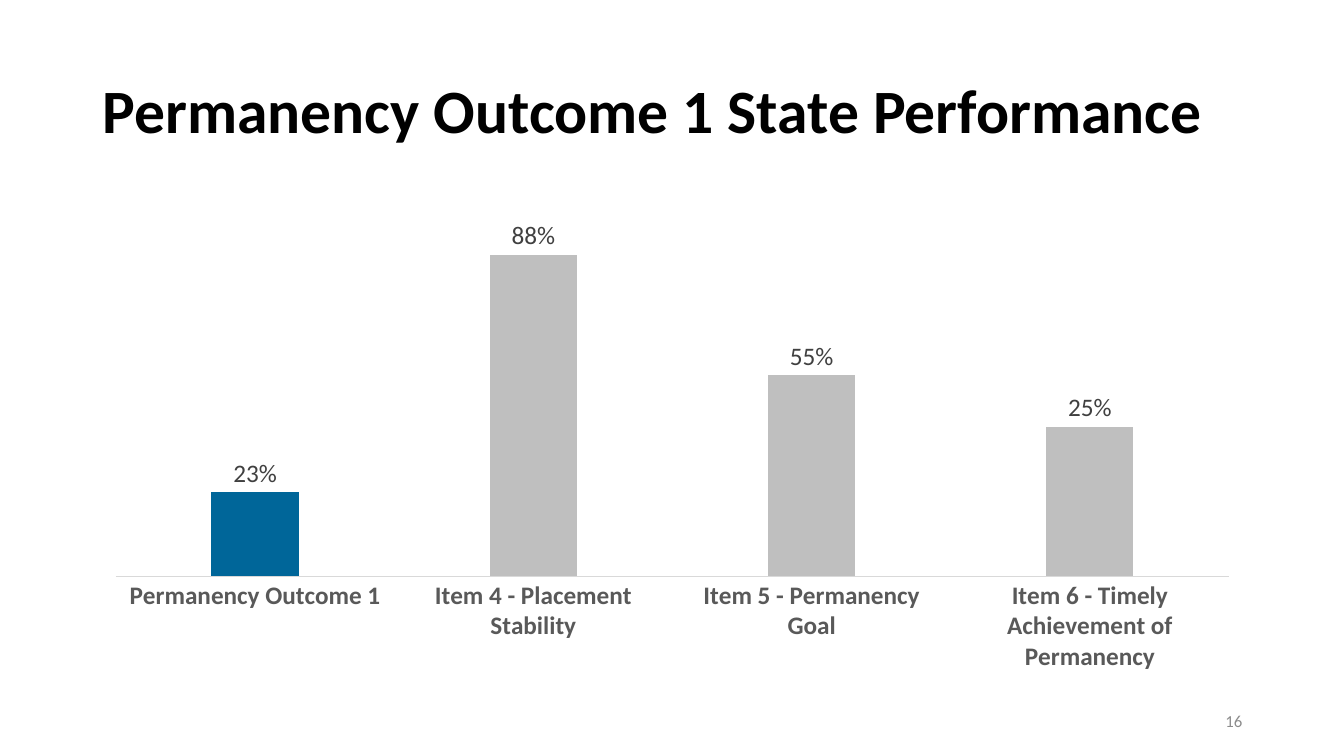
from dataclasses import dataclass

import pptx
import pptx.chart.data
import pptx.dml.color
import pptx.enum.chart
import pptx.enum.text
import pptx.util

Inches = pptx.util.Inches
Pt = pptx.util.Pt

FONT = "Calibri"
COLORS = {
    "title": "000000",
    "outcome": "006699",
    "item": "BFBFBF",
    "category": "595959",
    "label": "404040",
    "axis": "D9D9D9",
    "number": "8C8C8C",
}


@dataclass(frozen=True)
class Measure:
    name: str
    value: float
    color: str
    label: str = ""


MEASURES = [
    Measure("Permanency Outcome 1", 0.23, "outcome"),
    Measure("Item 4 - Placement Stability", 0.88, "item"),
    Measure("Item 5 - Permanency Goal", 0.55, "item"),
    Measure("Item 6 - Timely Achievement of Permanency", 0.41, "item", "25%"),
]


def rgb(color: str) -> pptx.dml.color.RGBColor:
    return pptx.dml.color.RGBColor.from_string(COLORS[color])


def set_font(font, size: float, color: str, bold: bool = False) -> None:
    font.name = FONT
    font.size = Pt(size)
    font.bold = bold
    font.color.rgb = rgb(color)


def add_title(page, text: str) -> None:
    title = page.shapes.title
    title.left, title.top = Inches(0.92), Inches(0.4)
    title.width, title.height = Inches(11.5), Inches(1.45)
    frame = title.text_frame
    frame.text = text
    frame.auto_size = pptx.enum.text.MSO_AUTO_SIZE.NONE
    frame.vertical_anchor = pptx.enum.text.MSO_ANCHOR.MIDDLE
    para = frame.paragraphs[0]
    para.alignment = pptx.enum.text.PP_ALIGN.LEFT
    para.line_spacing = 0.9
    set_font(para.font, 44, "title", bold=True)


def add_performance_chart(page, measures: list[Measure]) -> None:
    data = pptx.chart.data.CategoryChartData(number_format="0%")
    data.categories = [measure.name for measure in measures]
    data.add_series("Series 1", [measure.value for measure in measures])
    chart = page.shapes.add_chart(
        pptx.enum.chart.XL_CHART_TYPE.COLUMN_CLUSTERED,
        Inches(0.92), Inches(2), Inches(11.5), Inches(4.76), data,
    ).chart
    chart.has_legend = False
    chart.has_title = False
    set_font(chart.font, 10, "title")

    categories = chart.category_axis
    categories.major_tick_mark = pptx.enum.chart.XL_TICK_MARK.NONE
    categories.format.line.color.rgb = rgb("axis")
    categories.format.line.width = Pt(0.75)
    set_font(categories.tick_labels.font, 18, "category", bold=True)

    values = chart.value_axis
    values.minimum_scale, values.maximum_scale = 0, 1
    values.has_major_gridlines = False
    values.visible = False

    plot = chart.plots[0]
    plot.vary_by_categories = False
    plot.gap_width = 219
    plot.overlap = -27
    series = plot.series[0]
    labels = series.data_labels
    labels.show_value = True
    labels.number_format = "0%"
    labels.number_format_is_linked = False
    labels.position = pptx.enum.chart.XL_LABEL_POSITION.OUTSIDE_END
    set_font(labels.font, 18, "label")

    for index, measure in enumerate(measures):
        point = series.points[index]
        point.format.fill.solid()
        point.format.fill.fore_color.rgb = rgb(measure.color)
        if measure.label:
            label = point.data_label
            span = label.text_frame.paragraphs[0].add_run()
            span.text = measure.label
            set_font(span.font, 18, "label")
            label.position = pptx.enum.chart.XL_LABEL_POSITION.OUTSIDE_END


def add_page_number(page, text: str) -> None:
    box = page.shapes.add_textbox(Inches(9.42), Inches(6.95), Inches(3), Inches(0.4))
    frame = box.text_frame
    frame.word_wrap = True
    frame.vertical_anchor = pptx.enum.text.MSO_ANCHOR.MIDDLE
    frame.text = text
    para = frame.paragraphs[0]
    para.alignment = pptx.enum.text.PP_ALIGN.RIGHT
    set_font(para.font, 12, "number")


def main() -> None:
    deck = pptx.Presentation()
    deck.slide_width, deck.slide_height = Inches(13.33), Inches(7.5)
    page = deck.slides.add_slide(deck.slide_layouts.get_by_name("Title Only"))
    add_title(page, "Permanency Outcome 1 State Performance")
    add_performance_chart(page, MEASURES)
    add_page_number(page, "16")
    deck.save("out.pptx")


if __name__ == "__main__":
    main()
